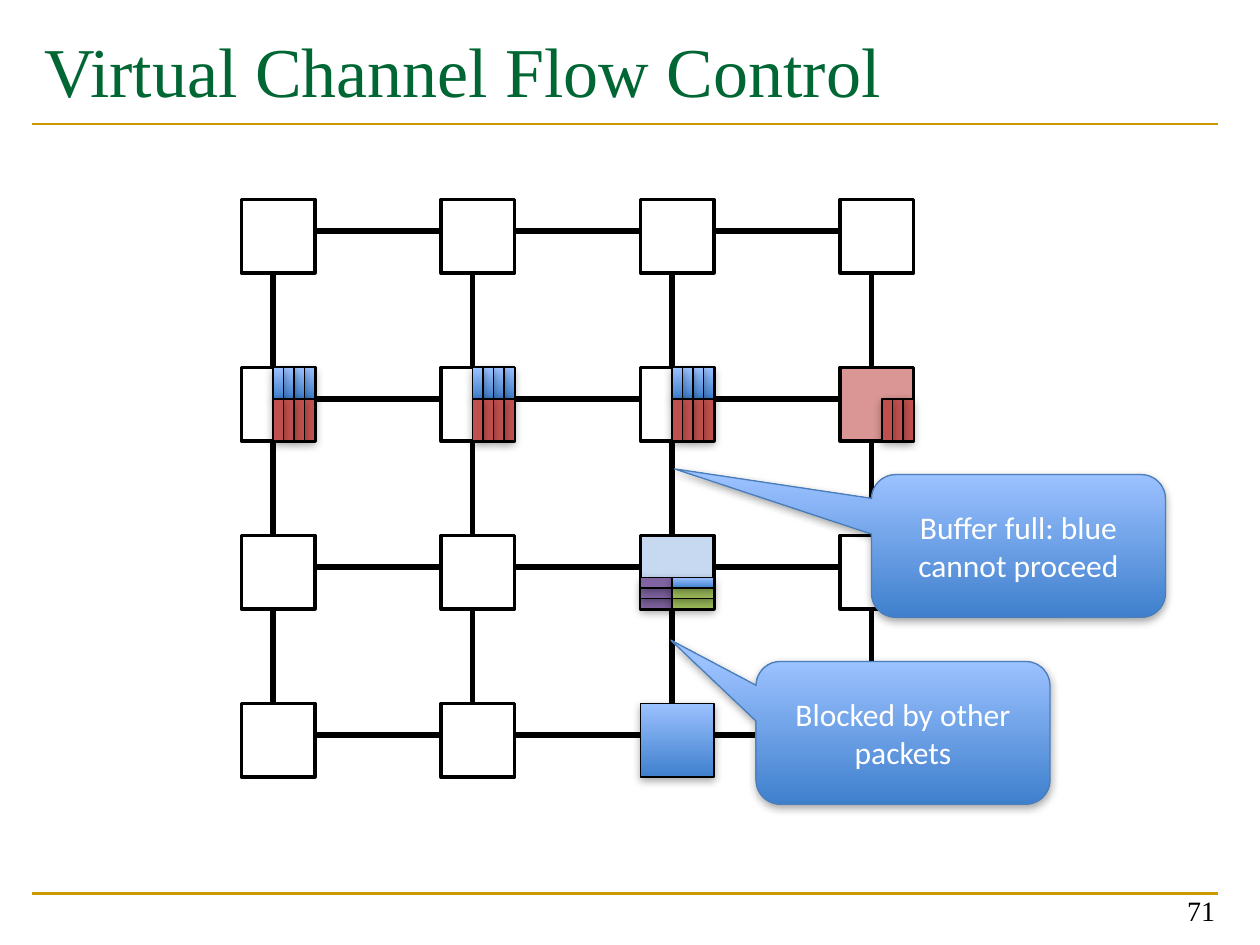
from dataclasses import dataclass
from typing import Optional

from lxml import etree
from pptx import Presentation
from pptx import util as u
from pptx.dml.color import RGBColor
from pptx.enum import shapes, text
from pptx.oxml.ns import qn

EMU_PER_PX = 7620  # 120 px to the inch
BLACK, WHITE, GOLD, GREEN_TITLE = "000000", "FFFFFF", "CC9900", "006633"
RED, GREEN, PURPLE = "C0504D", "9BBB59", "8064A2"
BLUE = ("3F80CD", "9BC1FF")  # gradient, bottom to top

# Mesh of routers
SIZE = 4
LEFT, TOP = 230, 190
PITCH_X, PITCH_Y = 190, 160
ROUTER = 70
PORT = 30  # where links meet a router side
FLIT = 10  # thickness of one buffer slot


@dataclass
class Box:
    left: int
    top: int
    width: int
    height: int
    fill: Optional[str | tuple[str, str]] = None
    line: str = BLACK
    weight: float = 0.75
    shadow: bool = True
    kind: shapes.MSO_SHAPE = shapes.MSO_SHAPE.RECTANGLE


@dataclass
class Callout:
    box: Box
    words: str
    adjustments: tuple[float, float, float]


@dataclass
class Buffer:
    """Slots of one virtual channel, placed relative to a router's corner."""
    column: int
    row: int
    left: int
    top: int
    width: int
    height: int
    fills: list
    sideways: bool = True


def px(length: int) -> int:
    return u.Emu(length * EMU_PER_PX)


def color(hex_code: str) -> RGBColor:
    return RGBColor.from_string(hex_code)


def corner(column: int, row: int) -> tuple[int, int]:
    return LEFT + column * PITCH_X, TOP + row * PITCH_Y


def set_all(target, values: dict) -> None:
    for name, value in values.items():
        setattr(target, name, value)


def write(shape, words: str, size: int, font: str, hex_code: str,
          align: text.PP_ALIGN, anchor: text.MSO_ANCHOR) -> None:
    frame = shape.text_frame
    frame.text = words
    set_all(frame, {"word_wrap": True, "vertical_anchor": anchor,
                    "auto_size": text.MSO_AUTO_SIZE.NONE})
    paragraph = frame.paragraphs[0]
    paragraph.alignment = align
    run = paragraph.runs[0]
    set_all(run.font, {"size": u.Pt(size), "name": font})
    run.font.color.rgb = color(hex_code)


def add_soft_shadow(shape) -> None:
    effects = shape._element.spPr.find(qn("a:effectLst"))
    shadow = etree.SubElement(effects, qn("a:outerShdw"), blurRad="63500",
                              dist="23000", dir="5400000", rotWithShape="0")
    shade = etree.SubElement(shadow, qn("a:srgbClr"), val=BLACK)
    etree.SubElement(shade, qn("a:alpha"), val="35000")


def draw_box(slide, box: Box):
    shape = slide.shapes.add_shape(
        box.kind, px(box.left), px(box.top), px(box.width), px(box.height))
    if box.fill is None:
        shape.fill.background()
    elif isinstance(box.fill, tuple):
        shape.fill.gradient()
        shape.fill.gradient_angle = 90
        for stop, hex_code in zip(shape.fill.gradient_stops, box.fill):
            stop.color.rgb = color(hex_code)
    else:
        shape.fill.solid()
        shape.fill.fore_color.rgb = color(box.fill)
    shape.line.color.rgb = color(box.line)
    shape.line.width = u.Pt(box.weight)
    shape.shadow.inherit = False
    if box.shadow:
        add_soft_shadow(shape)
    return shape


def draw_line(slide, x1: int, y1: int, x2: int, y2: int,
              hex_code: str = BLACK, weight: float = 3) -> None:
    line = slide.shapes.add_connector(
        shapes.MSO_CONNECTOR.STRAIGHT, px(x1), px(y1), px(x2), px(y2))
    line.line.color.rgb = color(hex_code)
    line.line.width = u.Pt(weight)
    etree.SubElement(line._element.spPr, qn("a:effectLst"))


def draw_mesh(slide, special: dict[tuple[int, int], Box]) -> None:
    for row in range(SIZE):
        for column in range(SIZE):
            x, y = corner(column, row)
            style = special.get((column, row), {})
            draw_box(slide, Box(x, y, ROUTER, ROUTER,
                                **{"weight": 2, "shadow": False, **style}))
            if column < SIZE - 1:
                draw_line(slide, x + ROUTER, y + PORT, x + PITCH_X, y + PORT)
            if row < SIZE - 1:
                draw_line(slide, x + PORT, y + ROUTER, x + PORT, y + PITCH_Y)


def draw_buffer(slide, buffer: Buffer) -> None:
    x, y = corner(buffer.column, buffer.row)
    for index, fill in reversed(list(enumerate(buffer.fills))):
        step = index * FLIT
        dx, dy = (step, 0) if buffer.sideways else (0, step)
        draw_box(slide, Box(x + buffer.left + dx, y + buffer.top + dy,
                            buffer.width, buffer.height, fill))


def draw_callout(slide, callout: Callout) -> None:
    shape = draw_box(slide, callout.box)
    for index, value in enumerate(callout.adjustments):
        shape.adjustments[index] = value
    write(shape, callout.words, 18, "Calibri", WHITE,
          text.PP_ALIGN.CENTER, text.MSO_ANCHOR.MIDDLE)


def main() -> None:
    presentation = Presentation()
    set_all(presentation, {"slide_width": px(1200), "slide_height": px(900)})
    slide = presentation.slides.add_slide(presentation.slide_layouts[5])

    # Title, rules and page number
    for y in (118, 851):
        draw_line(slide, 30, y, 1160, y, GOLD, 1.5)
    title = slide.shapes.title
    set_all(title, {"left": px(30), "top": px(20),
                    "width": px(1130), "height": px(140)})
    write(title, "Virtual Channel Flow Control", 40, "Times New Roman",
          GREEN_TITLE, text.PP_ALIGN.LEFT, text.MSO_ANCHOR.TOP)
    number = slide.shapes.add_textbox(px(889), px(829), px(280), px(60))
    write(number, "71", 16, "Times New Roman", BLACK,
          text.PP_ALIGN.RIGHT, text.MSO_ANCHOR.BOTTOM)

    # Routers and links, keyed by column and row
    draw_mesh(slide, {
        (3, 1): {"fill": "D99694"},
        (2, 2): {"fill": "C6D9F1"},
        (2, 3): {"fill": BLUE, "weight": 0.75, "shadow": True},
    })

    # Virtual channel buffers
    for column in range(3):
        draw_buffer(slide, Buffer(column, 1, 30, 0, FLIT, 30, [BLUE] * 4))
        draw_buffer(slide, Buffer(column, 1, 30, 30, FLIT, 40, [RED] * 4))
    draw_buffer(slide, Buffer(3, 1, 40, 30, FLIT, 40, [RED] * 3))
    draw_buffer(slide, Buffer(2, 2, 0, 40, 30, FLIT, [PURPLE] * 3, False))
    draw_buffer(slide, Buffer(2, 2, 30, 40, 40, FLIT,
                              [BLUE, GREEN, GREEN], False))

    # Explanations
    bubble = {"width": 280, "height": 136, "fill": BLUE, "line": "4A7EBB",
              "kind": shapes.MSO_SHAPE.ROUNDED_RECTANGULAR_CALLOUT}
    for callout in (
        Callout(Box(720, 630, **bubble), "Blocked by other packets",
                (-0.79, -0.65, 0.17)),
        Callout(Box(830, 452, **bubble), "Buffer full: blue cannot proceed",
                (-1.17, -0.54, 0.17)),
    ):
        draw_callout(slide, callout)

    presentation.save("out.pptx")


if __name__ == "__main__":
    main()
